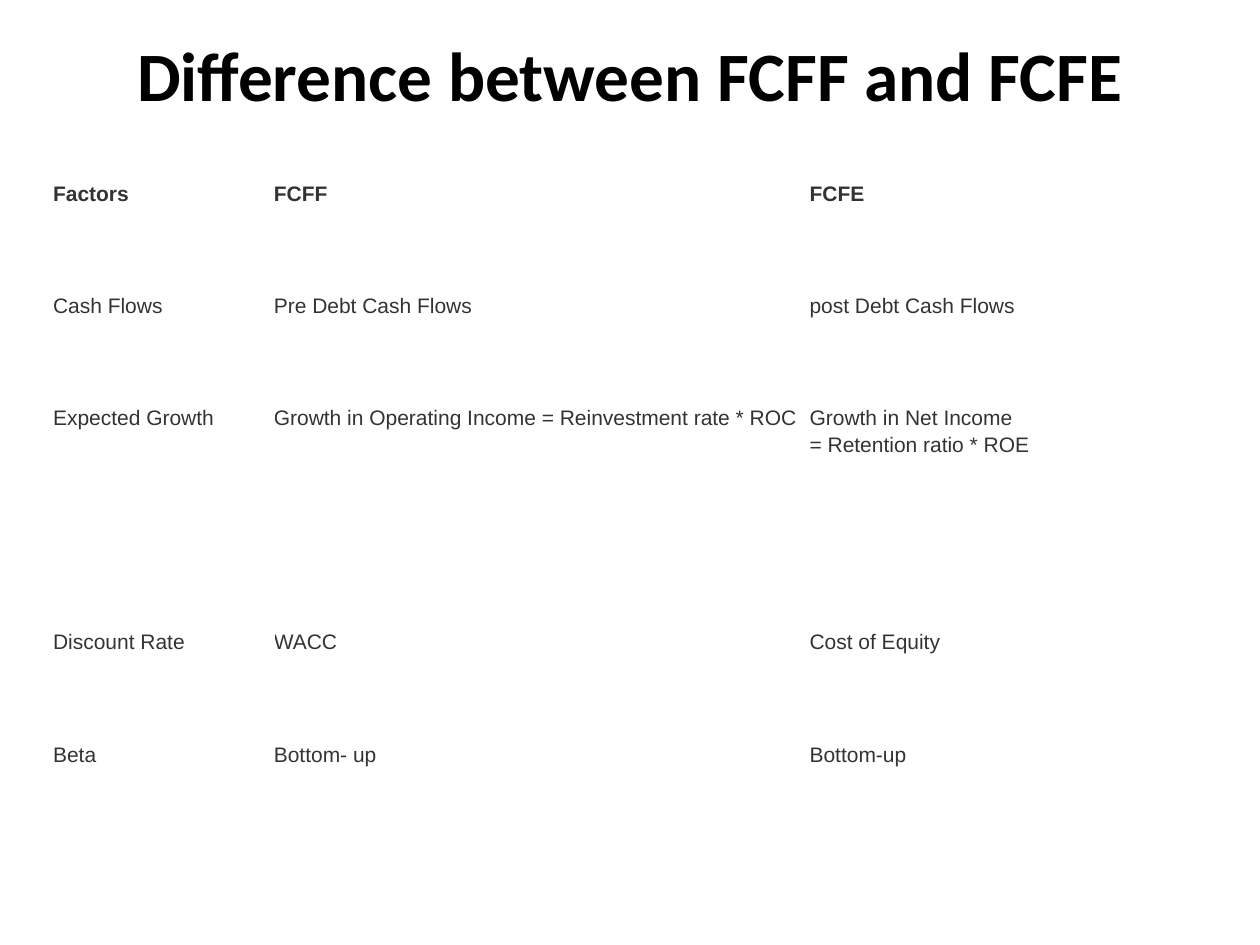
from dataclasses import dataclass

from pptx import Presentation
from pptx.dml.color import RGBColor
from pptx.enum.text import MSO_ANCHOR, MSO_AUTO_SIZE, PP_ALIGN
from pptx.util import Cm, Pt

CENTER, JUSTIFY = PP_ALIGN.CENTER, PP_ALIGN.JUSTIFY
MIDDLE, TOP = MSO_ANCHOR.MIDDLE, MSO_ANCHOR.TOP
TITLE_ONLY = 5


@dataclass(frozen=True)
class Theme:
    title_font: str = "Calibri"
    title_size: float = 39.6
    title_color: RGBColor = RGBColor(0x00, 0x00, 0x00)
    table_font: str = "Arial"
    table_size: float = 12
    table_color: RGBColor = RGBColor(0x33, 0x33, 0x33)
    background: RGBColor = RGBColor(0xFF, 0xFF, 0xFF)
    line_spacing: float = 1.15
    closing_space: float = 11.2


@dataclass(frozen=True)
class Factor:
    name: str
    fcff: tuple[str, ...]
    fcfe: tuple[str, ...]
    height_units: int = 1


THEME = Theme()
ROW_UNIT = 2.26
COLUMN_WIDTHS = (4.45, 10.8, 8.46)
FACTORS = (
    Factor("Factors", ("FCFF",), ("FCFE",)),
    Factor("Cash Flows", ("Pre Debt Cash Flows",), ("post Debt Cash Flows",)),
    Factor("Expected Growth",
           ("Growth in Operating Income = Reinvestment rate * ROC",),
           ("Growth in Net Income", "= Retention ratio * ROE"), 2),
    Factor("Discount Rate", ("WACC",), ("Cost of Equity",)),
    Factor("Beta", ("Bottom- up",), ("Bottom-up",)),
)


def add_run(paragraph, text: str, font: str, size: float,
            color: RGBColor, bold: bool) -> None:
    run = paragraph.add_run()
    run.text = text
    run.font.name = font
    run.font.size = Pt(size)
    run.font.color.rgb = color
    run.font.bold = bold


def draw_title(slide, text: str) -> None:
    title = slide.shapes.title
    title.left, title.top = Cm(1.27), Cm(0.76)
    title.width, title.height = Cm(22.86), Cm(3.17)
    frame = title.text_frame
    frame.auto_size = MSO_AUTO_SIZE.NONE
    frame.word_wrap = True
    frame.vertical_anchor = MIDDLE
    # A deep bottom margin lifts the heading above the middle
    frame.margin_bottom = Cm(1.83)
    paragraph = frame.paragraphs[0]
    paragraph.alignment = CENTER
    add_run(paragraph, text, THEME.title_font, THEME.title_size,
            THEME.title_color, True)


def fill_cell(cell, lines: tuple[str, ...], bold: bool) -> None:
    cell.fill.solid()
    cell.fill.fore_color.rgb = THEME.background
    cell.margin_left = cell.margin_right = 0
    cell.margin_top = cell.margin_bottom = 0
    cell.vertical_anchor = TOP
    frame = cell.text_frame
    for index, line in enumerate(lines):
        paragraph = frame.add_paragraph() if index else frame.paragraphs[0]
        paragraph.alignment = JUSTIFY
        paragraph.line_spacing = THEME.line_spacing
        if index:
            paragraph.space_after = Pt(THEME.closing_space)
        add_run(paragraph, line, THEME.table_font, THEME.table_size,
                THEME.table_color, bold)


def draw_comparison(slide, factors: tuple[Factor, ...]) -> None:
    total_height = ROW_UNIT * sum(factor.height_units for factor in factors)
    comparison = slide.shapes.add_table(
        len(factors), len(COLUMN_WIDTHS), Cm(1.07), Cm(3.61),
        Cm(sum(COLUMN_WIDTHS)), Cm(total_height)).table
    for column, width in zip(comparison.columns, COLUMN_WIDTHS):
        column.width = Cm(width)
    for index, (row, factor) in enumerate(zip(comparison.rows, factors)):
        row.height = Cm(ROW_UNIT * factor.height_units)
        contents = ((factor.name,), factor.fcff, factor.fcfe)
        for cell, lines in zip(row.cells, contents):
            fill_cell(cell, lines, bold=index == 0)


def main() -> None:
    deck = Presentation()
    deck.slide_width, deck.slide_height = Cm(25.4), Cm(19.05)
    slide = deck.slides.add_slide(deck.slide_layouts[TITLE_ONLY])

    # Heading
    draw_title(slide, "Difference between FCFF and FCFE")

    # Factor by factor comparison
    draw_comparison(slide, FACTORS)

    deck.save("out.pptx")


if __name__ == "__main__":
    main()
